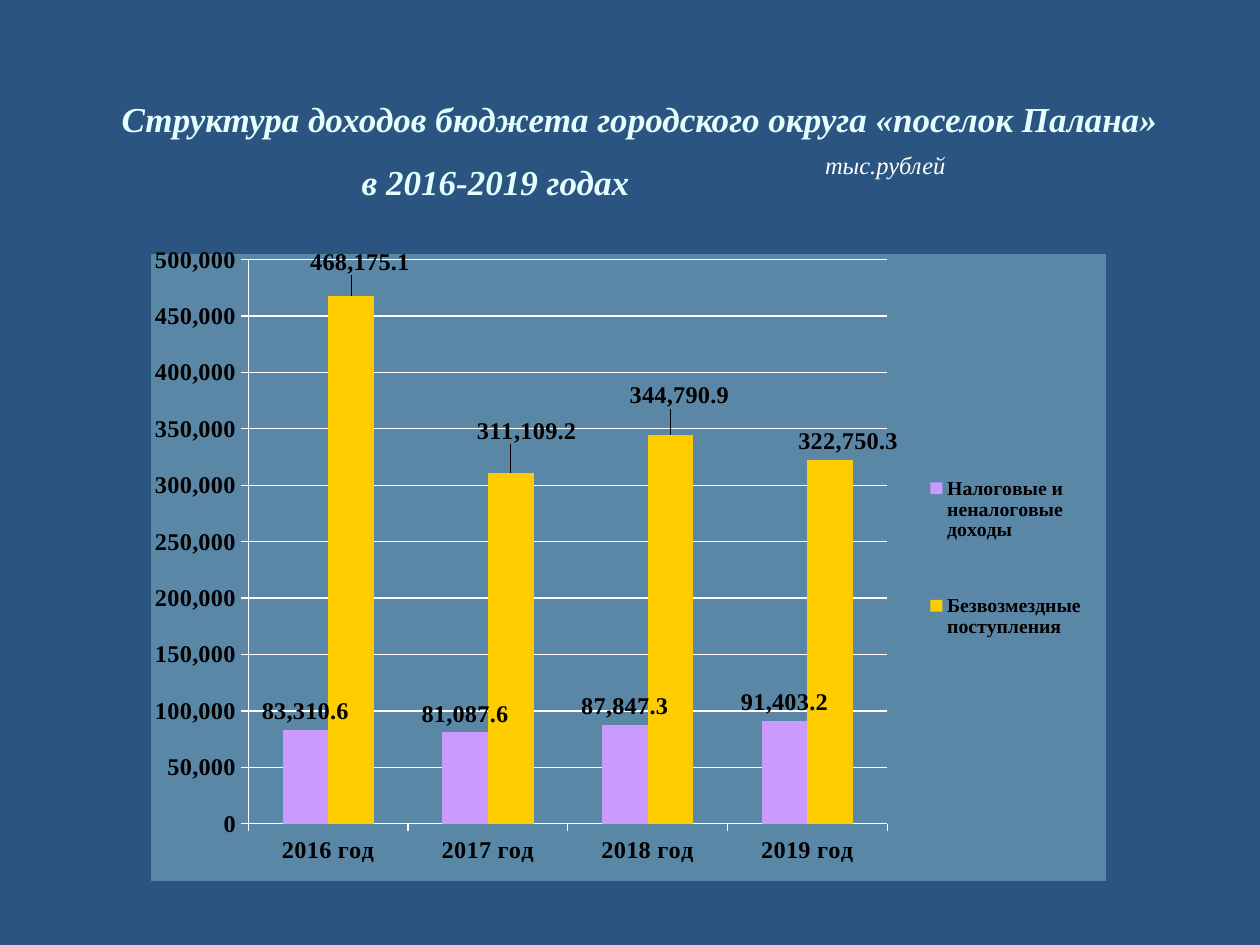
from dataclasses import dataclass

from lxml.etree import SubElement
from pptx import Presentation
from pptx.chart.data import CategoryChartData
from pptx.dml.color import RGBColor as RGB
from pptx.enum.chart import XL_CHART_TYPE as CHART, XL_LABEL_POSITION as LABEL
from pptx.enum.chart import XL_LEGEND_POSITION as LEGEND, XL_TICK_MARK as TICK
from pptx.enum.text import MSO_ANCHOR as ANCHOR, MSO_AUTO_SIZE as FIT, PP_ALIGN as ALIGN
from pptx.oxml import parse_xml
from pptx.oxml.ns import nsdecls, qn
from pptx.util import Pt


@dataclass(frozen=True)
class Theme:
    font: str = "Times New Roman"
    back: str = "2B5481"
    title: str = "E5FFFF"
    light: str = "FFFFFF"
    dark: str = "000000"
    panel: str = "CCFFFF"
    panel_alpha: int = 30
    own: str = "CC99FF"
    grants: str = "FFCC00"
    title_size: float = 20
    unit_size: float = 14
    chart_size: float = 13.9
    legend_size: float = 11.3


T = Theme()
YEARS = ["2016 год", "2017 год", "2018 год", "2019 год"]
SERIES = [
    ("Налоговые и неналоговые\nдоходы", T.own, [83310.6, 81087.6, 87847.3, 91403.2], []),
    ("Безвозмездные\nпоступления", T.grants, [468175.1, 311109.2, 344790.9, 322750.3],
     [(9, -15), (16, -24), (9, -21), (18, 0)]),
]


def px(n):
    return round(n * 914400 / 126)


def place(s, box):
    s.left, s.top, s.width, s.height = map(px, box)


def set_font(font, size, color, bold=False, italic=False):
    font.name, font.size, font.bold, font.italic = T.font, Pt(size), bold, italic
    font.color.rgb = RGB.from_string(color)


def write(p, text, align=ALIGN.LEFT, spacing=1.0, indent=0, **font):
    p.alignment, p.line_spacing = align, spacing
    if indent:
        p._p.get_or_add_pPr().set("marL", str(px(indent)))
    r = p.add_run()
    r.text = text
    set_font(r.font, **font)


def add_title(slide, box):
    s = slide.shapes.title
    place(s, box)
    tf = s.text_frame
    tf.auto_size, tf.word_wrap, tf.vertical_anchor = FIT.NONE, True, ANCHOR.BOTTOM
    tf.margin_bottom = px(131)
    style = dict(spacing=1.5, size=T.title_size, color=T.title, bold=True, italic=True)
    write(tf.paragraphs[0], "Структура доходов бюджета городского округа «поселок Палана»",
          align=ALIGN.CENTER, **style)
    write(tf.add_paragraph(), "в 2016-2019 годах", indent=275, **style)


def add_unit(slide, box):
    tf = slide.shapes.add_textbox(*map(px, box)).text_frame
    tf.word_wrap = True
    write(tf.paragraphs[0], "тыс.рублей", align=ALIGN.RIGHT,
          size=T.unit_size, color=T.light, italic=True)


def make_layout(inner=False, **values):
    layout = parse_xml(f"<c:layout {nsdecls('c')}><c:manualLayout/></c:layout>")
    rules = {"layoutTarget": "inner", "xMode": "edge", "yMode": "edge"} if inner else {}
    for tag, val in {**rules, **values}.items():
        SubElement(layout[0], qn(f"c:{tag}")).set("val", str(val))
    return layout


def set_layout(parent, layout, after=None):
    for old in parent.findall(qn("c:layout")):
        parent.remove(old)
    if after is None:
        parent.insert(0, layout)
    else:
        parent.find(qn(after)).addnext(layout)


def fill_panel(chart):
    sp_pr = parse_xml(
        f"<c:spPr {nsdecls('c', 'a')}><a:solidFill><a:srgbClr val='{T.panel}'>"
        f"<a:alpha val='{T.panel_alpha * 1000}'/></a:srgbClr></a:solidFill>"
        "<a:ln><a:noFill/></a:ln></c:spPr>")
    chart._chartSpace.find(qn("c:chart")).addnext(sp_pr)


def style_line(line):
    line.color.rgb = RGB.from_string(T.light)
    line.width = Pt(0.75)


def style_axes(chart):
    for axis in (chart.category_axis, chart.value_axis):
        axis.major_tick_mark, axis.minor_tick_mark = TICK.OUTSIDE, TICK.NONE
        style_line(axis.format.line)
        set_font(axis.tick_labels.font, T.chart_size, T.dark, bold=True)
    axis = chart.value_axis
    axis.minimum_scale, axis.maximum_scale, axis.major_unit = 0, 500000, 50000
    axis.tick_labels.number_format = "#,##0"
    axis.tick_labels.number_format_is_linked = False
    style_line(axis.major_gridlines.format.line)


def style_series(ser, color, shifts, width, height):
    ser.format.fill.solid()
    ser.format.fill.fore_color.rgb = RGB.from_string(color)
    ser.invert_if_negative = False
    labels = ser.data_labels
    labels.show_value, labels.position = True, LABEL.OUTSIDE_END
    labels.number_format, labels.number_format_is_linked = "#,##0.0", False
    set_font(labels.font, T.chart_size, T.dark, bold=True)
    for i, (dx, dy) in enumerate(shifts):
        label = ser.points[i].data_label
        set_font(label.font, T.chart_size, T.dark, bold=True)
        label.position = LABEL.OUTSIDE_END
        d_lbl = labels._element.findall(qn("c:dLbl"))[i]
        set_layout(d_lbl, make_layout(x=dx / width, y=dy / height), after="c:idx")


def add_income_chart(slide, box):
    data = CategoryChartData(number_format="#,##0.0")
    data.categories = YEARS
    for name, _, values, _ in SERIES:
        data.add_series(name, values)
    chart = slide.shapes.add_chart(CHART.COLUMN_CLUSTERED, *map(px, box), data).chart
    set_font(chart.font, T.chart_size, T.light)
    chart.has_title = False
    fill_panel(chart)
    style_axes(chart)
    plot = chart.plots[0]
    plot.gap_width, plot.overlap, plot.vary_by_categories = 150, 0, False
    for ser, (_, color, _, shifts) in zip(plot.series, SERIES):
        style_series(ser, color, shifts, *box[2:])
    plot_area = chart._chartSpace.find(qn("c:chart")).find(qn("c:plotArea"))
    set_layout(plot_area, make_layout(inner=True, x=0.102, y=0.009, w=0.669, h=0.9))
    chart.has_legend = True
    legend = chart.legend
    legend.position, legend.include_in_layout = LEGEND.RIGHT, False
    set_font(legend.font, T.legend_size, T.dark, bold=True)
    set_layout(legend._element, make_layout(xMode="edge", yMode="edge", x=0.8, y=0.27, w=0.19, h=0.43),
               after="c:legendPos")


def main():
    prs = Presentation()
    prs.slide_width, prs.slide_height = px(1260), px(945)
    slide = prs.slides.add_slide(prs.slide_layouts[5])
    slide.background.fill.solid()
    slide.background.fill.fore_color.rgb = RGB.from_string(T.back)
    add_title(slide, (74, 86, 1131, 248))
    add_income_chart(slide, (151, 246, 955, 635))
    add_unit(slide, (769, 144, 189, 42))
    prs.save("out.pptx")


if __name__ == "__main__":
    main()
